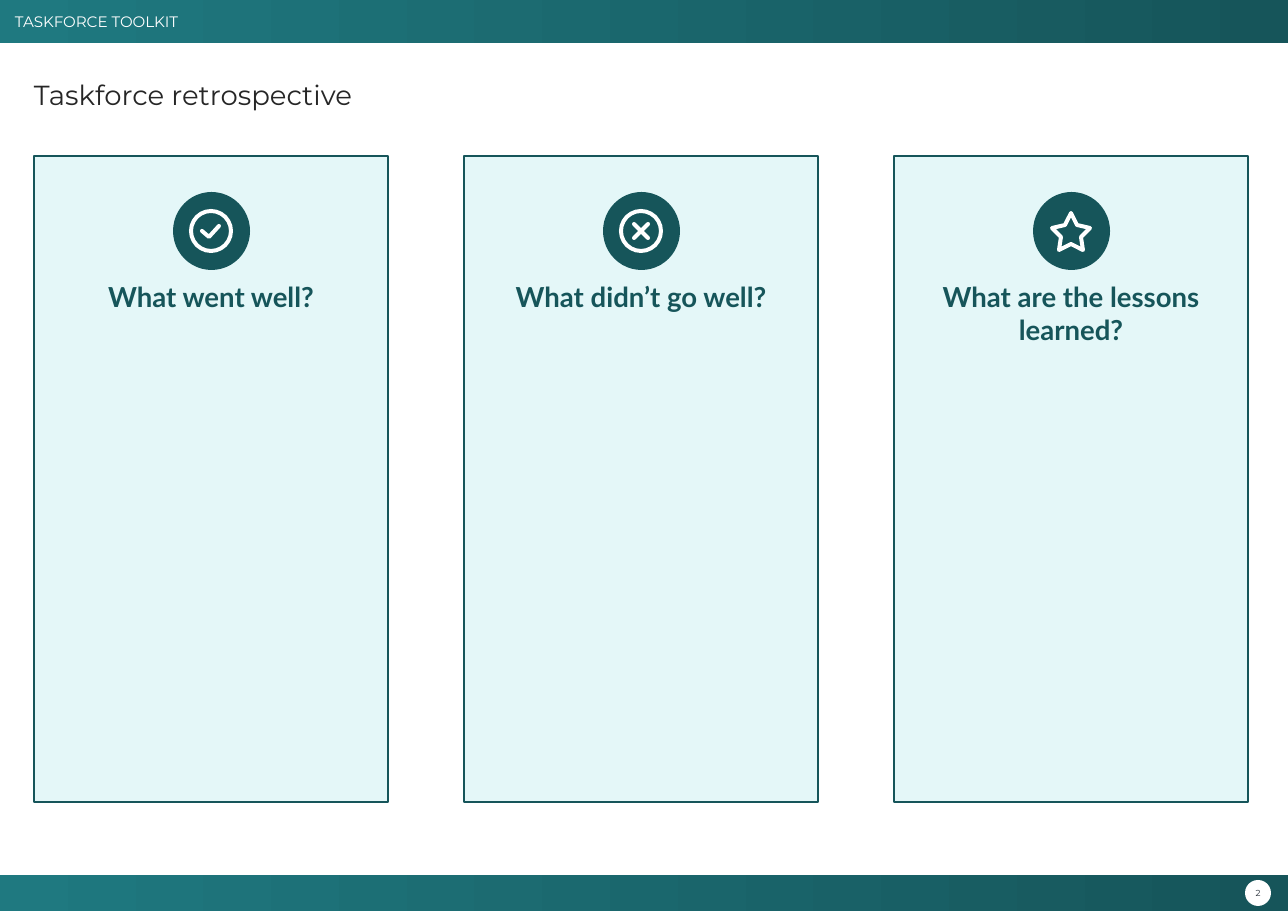
from dataclasses import dataclass

from lxml import etree
from pptx import Presentation
from pptx import util as u
from pptx.dml.color import RGBColor
from pptx.enum import shapes, text
from pptx.oxml import ns

EMU_PER_PX = 8298
TEAL = RGBColor(0x1F, 0x79, 0x80)
DARK_TEAL = RGBColor(0x16, 0x55, 0x5A)
PALE_TEAL = RGBColor(0xE4, 0xF7, 0xF8)
WHITE = RGBColor(0xFF, 0xFF, 0xFF)
INK = RGBColor(0x26, 0x26, 0x26)
SLATE = RGBColor(0x22, 0x2A, 0x35)

SLIDE_WIDTH, SLIDE_HEIGHT = 1288, 911
CARD_LEFT, CARD_TOP, CARD_WIDTH, CARD_HEIGHT = 34, 156, 354, 646
CARD_PITCH = 430
HEADING_INSET = 124
BADGE_WIDTH, BADGE_HEIGHT, BADGE_CENTRE = 77, 78, 75
RING_SIZE, STROKE = 40, 4

Point = tuple[int, int]


@dataclass(frozen=True)
class Box:
    left: int
    top: int
    width: int
    height: int

    def emu(self) -> list[int]:
        return [px(n) for n in (self.left, self.top, self.width, self.height)]


@dataclass(frozen=True)
class TextStyle:
    font: str
    size: float
    color: RGBColor
    bold: bool = False
    align: text.PP_ALIGN = text.PP_ALIGN.LEFT
    anchor: text.MSO_ANCHOR = text.MSO_ANCHOR.MIDDLE
    insets: tuple[int, int, int, int] = (0, 0, 0, 0)
    wrap: bool = True
    line_spacing: float = 1.0


@dataclass(frozen=True)
class Icon:
    strokes: tuple[tuple[Point, ...], ...]
    ringed: bool = True
    closed: bool = False


@dataclass(frozen=True)
class Card:
    heading: str
    icon: Icon


CHECK = Icon((((-9, 0), (-2, 6), (8, -5)),))
CROSS = Icon((((-7, -7), (7, 7)), ((-7, 7), (7, -7))))
STAR_RIGHT = ((0, -18), (6, -6), (19, -3), (10, 6), (12, 19), (0, 13))
STAR_LEFT = tuple((-x, y) for x, y in STAR_RIGHT[-2:0:-1])
STAR = Icon((STAR_RIGHT + STAR_LEFT,), ringed=False, closed=True)

CARDS = (
    Card("What went well?", CHECK),
    Card("What didn’t go well?", CROSS),
    Card("What are the lessons learned?", STAR),
)

CENTER = text.PP_ALIGN.CENTER
TOP = text.MSO_ANCHOR.TOP
HEADER_STYLE = TextStyle("Montserrat", 9.9, WHITE, insets=(15, 7, 8, 7))
NUMBER_STYLE = TextStyle("Montserrat", 5.7, SLATE, align=CENTER, wrap=False)
TITLE_STYLE = TextStyle("Montserrat", 18, INK, anchor=TOP, line_spacing=1.1)
HEADING_STYLE = TextStyle("Lato", 18, DARK_TEAL, bold=True, align=CENTER, anchor=TOP,
                          insets=(11, HEADING_INSET, 11, 6))


def px(count: int) -> int:
    return u.Emu(count * EMU_PER_PX)


def set_values(target, values: dict) -> None:
    for name, value in values.items():
        setattr(target, name, value)


def write(shape, wording: str, style: TextStyle) -> None:
    frame = shape.text_frame
    left, top, right, bottom = map(px, style.insets)
    set_values(frame, {
        "margin_left": left, "margin_top": top, "margin_right": right,
        "margin_bottom": bottom, "word_wrap": style.wrap,
        "vertical_anchor": style.anchor,
    })
    paragraph = frame.paragraphs[0]
    set_values(paragraph, {"alignment": style.align, "line_spacing": style.line_spacing})
    run = paragraph.add_run()
    run.text = wording
    set_values(run.font, {"name": style.font, "size": u.Pt(style.size), "bold": style.bold})
    run.font.color.rgb = style.color


def paint(shape, fill: RGBColor | None, line: RGBColor | None = None, width: int = 0) -> None:
    shape.shadow.inherit = False
    if fill is None:
        shape.fill.background()
    else:
        shape.fill.solid()
        shape.fill.fore_color.rgb = fill
    if line is None:
        shape.line.fill.background()
    else:
        shape.line.color.rgb = line
        shape.line.width = width


def add_band(slide, box: Box):
    shape = slide.shapes.add_shape(shapes.MSO_SHAPE.RECTANGLE, *box.emu())
    paint(shape, None)
    shape.fill.gradient()
    shape.fill.gradient_angle = 0
    for stop, color in zip(shape.fill.gradient_stops, (TEAL, DARK_TEAL)):
        stop.color.rgb = color
    return shape


def add_ellipse(slide, box: Box, fill: RGBColor | None):
    shape = slide.shapes.add_shape(shapes.MSO_SHAPE.OVAL, *box.emu())
    paint(shape, fill)
    return shape


def add_icon(slide, icon: Icon, center_x: int, center_y: int) -> None:
    if icon.ringed:
        half = RING_SIZE // 2
        ring = add_ellipse(slide, Box(center_x - half, center_y - half, RING_SIZE, RING_SIZE), None)
        paint(ring, None, WHITE, px(STROKE))
    strokes = [[(px(center_x + x), px(center_y + y)) for x, y in stroke]
               for stroke in icon.strokes]
    builder = slide.shapes.build_freeform(*strokes[0][0])
    for index, (start, *rest) in enumerate(strokes):
        if index:
            builder.move_to(*start)
        builder.add_line_segments(rest, close=icon.closed)
    shape = builder.convert_to_shape()
    paint(shape, None, WHITE, px(STROKE))
    outline = shape.line._get_or_add_ln()
    outline.set("cap", "rnd")
    etree.SubElement(outline, ns.qn("a:round"))


def add_card(slide, card: Card, left: int) -> None:
    box = Box(left, CARD_TOP, CARD_WIDTH, CARD_HEIGHT)
    panel = slide.shapes.add_shape(shapes.MSO_SHAPE.RECTANGLE, *box.emu())
    paint(panel, PALE_TEAL, DARK_TEAL, u.Pt(1.5))
    write(panel, card.heading, HEADING_STYLE)
    center_x, center_y = left + CARD_WIDTH // 2, CARD_TOP + BADGE_CENTRE
    badge = Box(center_x - BADGE_WIDTH // 2, center_y - BADGE_HEIGHT // 2,
                BADGE_WIDTH, BADGE_HEIGHT)
    add_ellipse(slide, badge, DARK_TEAL)
    add_icon(slide, card.icon, center_x, center_y)


def main() -> None:
    presentation = Presentation()
    set_values(presentation, {"slide_width": px(SLIDE_WIDTH), "slide_height": px(SLIDE_HEIGHT)})
    slide = presentation.slides.add_slide(presentation.slide_layouts[6])

    header = add_band(slide, Box(0, 0, SLIDE_WIDTH, 43))
    write(header, "TASKFORCE TOOLKIT", HEADER_STYLE)
    add_band(slide, Box(0, 875, SLIDE_WIDTH, 36))
    page_number = add_ellipse(slide, Box(1245, 880, 26, 26), WHITE)
    write(page_number, "2", NUMBER_STYLE)

    title = slide.shapes.add_textbox(*Box(CARD_LEFT, 75, 861, 81).emu())
    write(title, "Taskforce retrospective", TITLE_STYLE)

    for index, card in enumerate(CARDS):
        add_card(slide, card, CARD_LEFT + index * CARD_PITCH)

    presentation.save("out.pptx")


if __name__ == "__main__":
    main()
